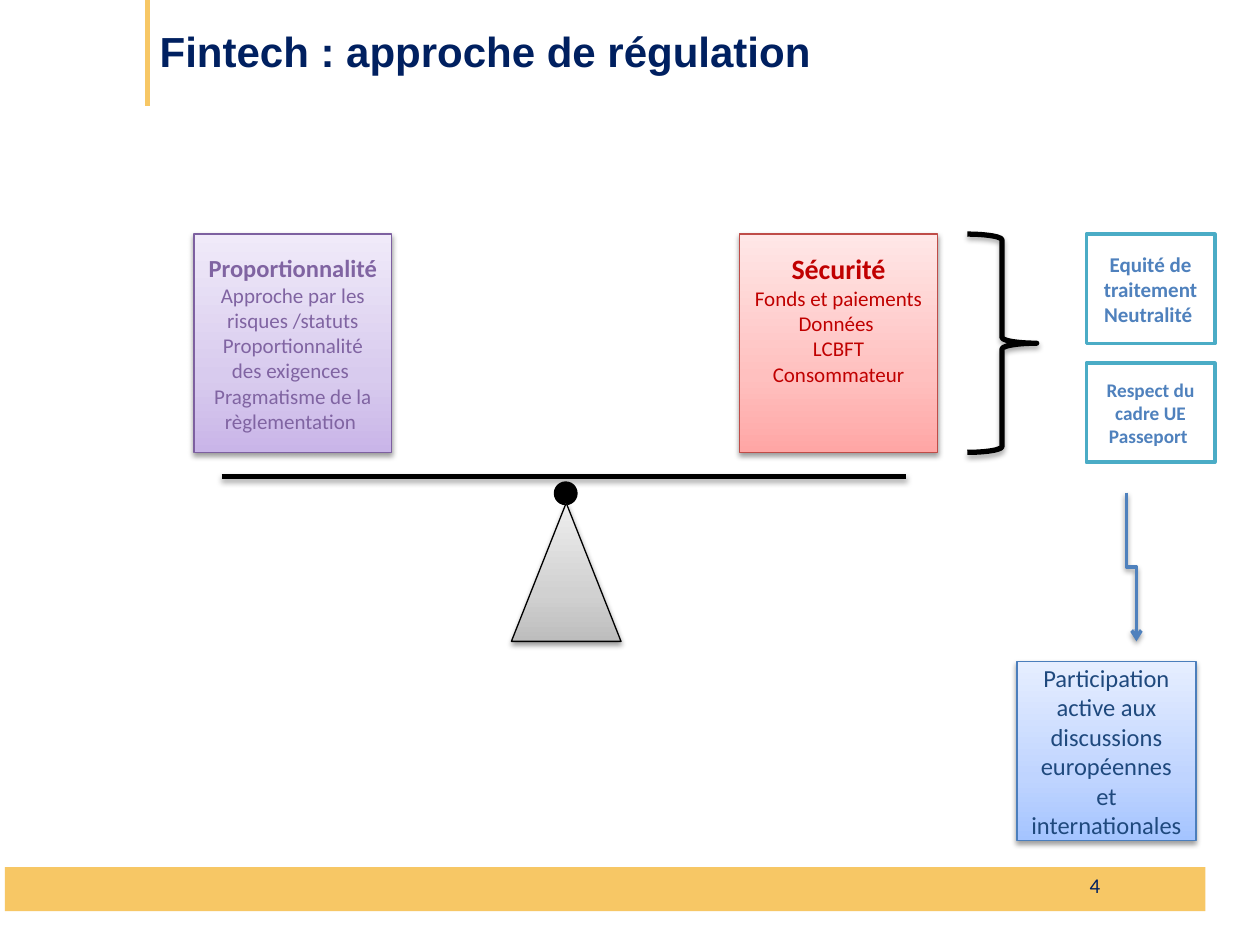
"""Build the slide on the regulatory approach to fintech: a balance and its outcomes."""
from copy import deepcopy

from lxml.etree import SubElement
from pptx import Presentation
from pptx.dml.color import RGBColor
from pptx.enum.shapes import MSO_CONNECTOR as Connector, MSO_SHAPE as Shape
from pptx.enum.text import MSO_ANCHOR as Anchor, PP_ALIGN as Align
from pptx.oxml.ns import qn
from pptx.util import Cm, Pt

BLACK = RGBColor(0x00, 0x00, 0x00)
WHITE = RGBColor(0xFF, 0xFF, 0xFF)
GOLD = RGBColor(0xF7, 0xC7, 0x65)
NAVY = RGBColor(0x00, 0x20, 0x60)
PURPLE = RGBColor(0x80, 0x64, 0xA2)
PURPLE_LINE = RGBColor(0x7D, 0x60, 0xA0)
RED = RGBColor(0xC0, 0x00, 0x00)
RED_LINE = RGBColor(0xBF, 0x4C, 0x48)
BLUE = RGBColor(0x4F, 0x81, 0xBD)
BLUE_LINE = RGBColor(0x4B, 0x7E, 0xBC)
DARK_BLUE = RGBColor(0x1F, 0x49, 0x7D)
TEAL = RGBColor(0x4B, 0xAC, 0xC6)
GREY_SHADES = (RGBColor(0xBD, 0xBD, 0xBD), RGBColor(0xD1, 0xD1, 0xD1), RGBColor(0xEE, 0xEE, 0xEE))
PURPLE_SHADES = (RGBColor(0xC9, 0xB5, 0xE8), RGBColor(0xD8, 0xCB, 0xEE), RGBColor(0xF0, 0xEA, 0xF9))
RED_SHADES = (RGBColor(0xFF, 0xA6, 0xA5), RGBColor(0xFF, 0xC0, 0xBF), RGBColor(0xFF, 0xE7, 0xE7))
BLUE_SHADES = (RGBColor(0xA4, 0xC4, 0xFF), RGBColor(0xBF, 0xD4, 0xFF), RGBColor(0xE6, 0xEE, 0xFF))

STOP_POSITIONS = (0, 0.35, 1)
BOX_TOP, BOX_WIDTH, BOX_HEIGHT = 4.72, 3.99, 4.4
OUTCOME_LEFT, OUTCOME_WIDTH = 21.9, 2.59


def add_shadow(effects, distance, opacity):
    """Put a soft downward shadow in an effect list."""
    shadow = SubElement(effects, qn("a:outerShdw"), blurRad=str(Pt(3.1)), dist=str(Pt(distance)),
                        dir="5400000", rotWithShape="0")
    color = SubElement(shadow, qn("a:srgbClr"), val=str(BLACK))
    SubElement(color, qn("a:alpha"), val=str(opacity * 1000))


def fill_gradient(shape, shades):
    """Fill a shape with three shades running from bottom to top."""
    shape.fill.gradient()
    shape.fill.gradient_angle = 90
    stop_list = shape._element.spPr.find(".//" + qn("a:gsLst"))
    stop_list.append(deepcopy(stop_list[-1]))
    for stop, shade, position in zip(shape.fill.gradient_stops, shades, STOP_POSITIONS):
        stop.color.rgb = shade
        stop.position = position


def add_figure(slide, kind, box, fill=None, line=None, width=0.75, shadow=None):
    """Add a preset shape with a plain colour, a gradient or no fill."""
    shape = slide.shapes.add_shape(kind, *map(Cm, box))
    shape.shadow.inherit = False
    if fill is None:
        shape.fill.background()
    elif isinstance(fill, RGBColor):
        shape.fill.solid()
        shape.fill.fore_color.rgb = fill
    else:
        fill_gradient(shape, fill)
    if line is None:
        shape.line.fill.background()
    else:
        shape.line.color.rgb = line
        shape.line.width = Pt(width)
    if shadow:
        add_shadow(shape._element.spPr.find(qn("a:effectLst")), *shadow)
    return shape


def add_line(slide, kind, ends, color, width, shadow=None):
    """Add a straight or elbow connector between two points."""
    connector = slide.shapes.add_connector(kind, *map(Cm, ends))
    connector.line.color.rgb = color
    connector.line.width = Pt(width)
    effects = SubElement(connector._element.spPr, qn("a:effectLst"))
    if shadow:
        add_shadow(effects, *shadow)
    return connector


def write_text(shape, lines, color, alignment=Align.CENTER, font_name="Calibri"):
    """Write lines given as (text, size, bold), centred vertically in a shape."""
    frame = shape.text_frame
    frame.word_wrap = True
    frame.vertical_anchor = Anchor.MIDDLE
    for index, (text, size, bold) in enumerate(lines):
        paragraph = frame.add_paragraph() if index else frame.paragraphs[0]
        paragraph.text = text
        paragraph.alignment = alignment
        font = paragraph.font
        font.name, font.size, font.bold = font_name, Pt(size), bold
        font.color.rgb = color


def add_label(slide, box, text, size, bold, alignment, font_name):
    """Add a one-line navy text box."""
    label = slide.shapes.add_textbox(*map(Cm, box))
    write_text(label, [(text, size, bold)], NAVY, alignment, font_name)


def add_frame(slide):
    """Add the title, its rule, the bottom band and the page number."""
    add_figure(slide, Shape.RECTANGLE, (0.1, 17.48, 24.8, 0.89), GOLD)
    add_line(slide, Connector.STRAIGHT, (2.97, 0, 2.97, 2.13), GOLD, 2.75)
    add_figure(slide, Shape.RECTANGLE, (24.3, 17.12, 0.72, 1.68), WHITE)
    add_label(slide, (2.97, -0.07, 18.4, 2.19), "Fintech : approche de régulation", 24, True,
              Align.LEFT, "Arial")
    add_label(slide, (16.51, 17.33, 5.92, 1.01), "4", 12, False, Align.RIGHT, "Calibri")


def add_balance(slide, soft, strong):
    """Add the beam, the pivot and the two weights."""
    add_line(slide, Connector.STRAIGHT, (4.47, 9.6, 18.27, 9.6), BLACK, 3, strong)
    add_figure(slide, Shape.FLOWCHART_CONNECTOR, (11.2, 9.74, 0.41, 0.41), BLACK, BLACK, 2)
    add_figure(slide, Shape.FLOWCHART_EXTRACT, (10.31, 10.14, 2.21, 2.79), GREY_SHADES, BLACK,
               shadow=soft)
    proportionality = add_figure(slide, Shape.RECTANGLE, (3.91, BOX_TOP, BOX_WIDTH, BOX_HEIGHT),
                                 PURPLE_SHADES, PURPLE_LINE, shadow=soft)
    write_text(proportionality, [
        ("Proportionnalité ", 14, True),
        ("Approche par les risques /statuts", 12, False),
        ("Proportionnalité des exigences ", 12, False),
        ("Pragmatisme de la règlementation ", 12, False),
    ], PURPLE)
    security = add_figure(slide, Shape.RECTANGLE, (14.91, BOX_TOP, BOX_WIDTH, BOX_HEIGHT),
                          RED_SHADES, RED_LINE, shadow=soft)
    security.text_frame.margin_bottom = Cm(1.1)
    write_text(security, [
        ("Sécurité", 16, True),
        ("Fonds et paiements", 12, False),
        ("Données ", 12, False),
        ("LCBFT", 12, False),
        ("Consommateur", 12, False),
    ], RED)


def add_outcomes(slide, soft, strong):
    """Add the brace, the two principles and the arrow to the participation box."""
    add_figure(slide, Shape.RIGHT_BRACE, (19.5, BOX_TOP, 1.4, BOX_HEIGHT), line=BLACK, width=3,
               shadow=strong)
    principles = [
        (BOX_TOP, 2.21, [("Equité de traitement Neutralité ", 12, True)]),
        (7.32, 2, [("Respect du cadre UE", 11, True), ("Passeport ", 11, True)]),
    ]
    for top, height, lines in principles:
        principle = add_figure(slide, Shape.RECTANGLE, (OUTCOME_LEFT, top, OUTCOME_WIDTH, height),
                               WHITE, TEAL, 2)
        write_text(principle, lines, BLUE)
    participation = add_figure(slide, Shape.RECTANGLE, (20.5, 13.34, 3.61, 3.61), BLUE_SHADES,
                               BLUE_LINE, shadow=soft)
    write_text(participation, [
        ("Participation active aux discussions européennes et internationales", 14, False),
    ], DARK_BLUE)
    arrow = add_line(slide, Connector.ELBOW, (24.31, 11.33, 21.31, 11.53), BLUE, 2, soft)
    arrow._element.spPr.xfrm.set("rot", "16200000")
    SubElement(arrow.line._get_or_add_ln(), qn("a:tailEnd"), type="arrow")


def main():
    """Build and save the presentation."""
    presentation = Presentation()
    presentation.slide_width, presentation.slide_height = Cm(25.4), Cm(19.05)
    slide = presentation.slides.add_slide(presentation.slide_layouts[6])
    soft, strong = (1.6, 38), (1.8, 35)
    add_frame(slide)
    add_balance(slide, soft, strong)
    add_outcomes(slide, soft, strong)
    presentation.save("out.pptx")


if __name__ == "__main__":
    main()
